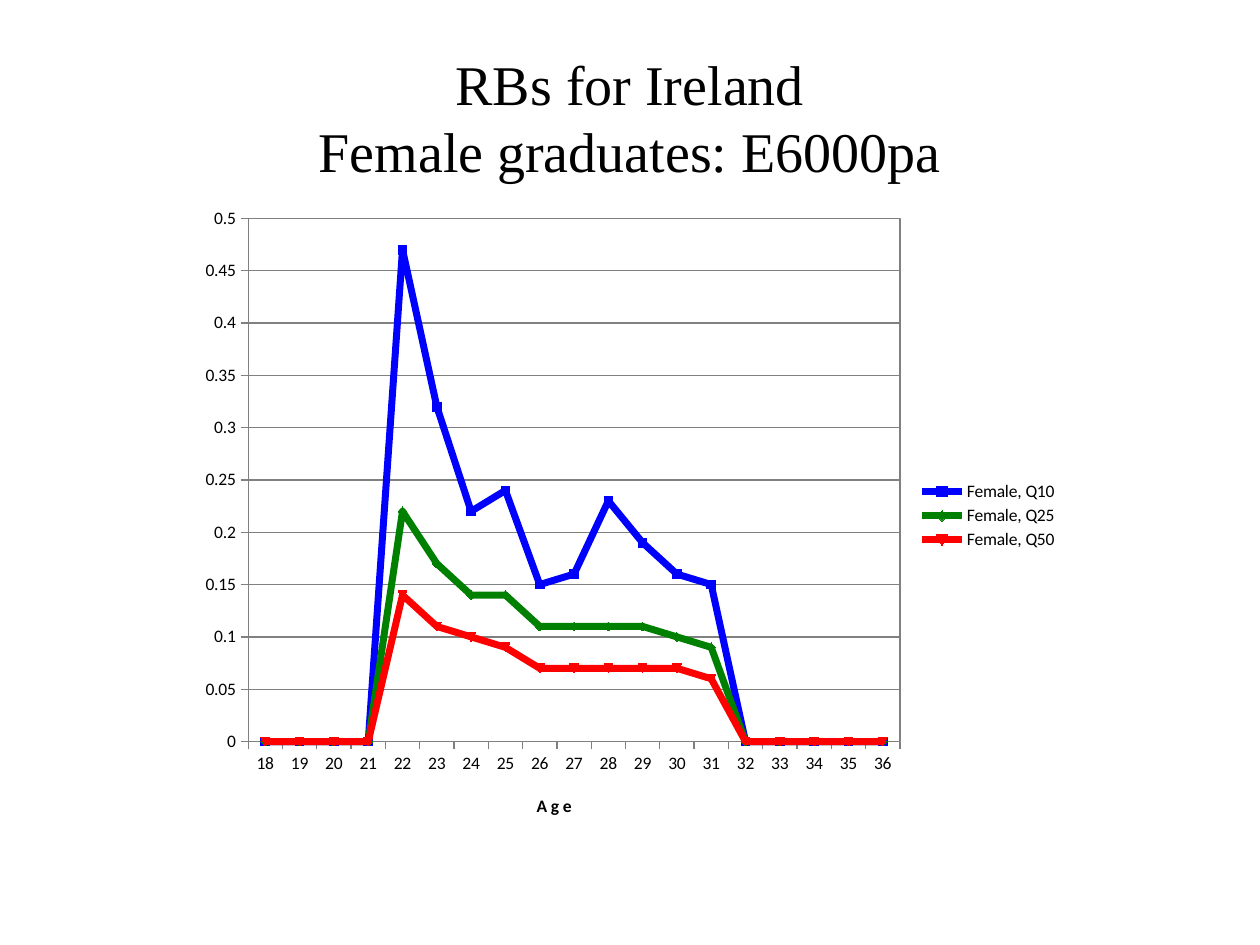
from dataclasses import dataclass

from lxml.etree import SubElement
from pptx import Presentation
from pptx.chart.data import CategoryChartData
from pptx.dml.color import RGBColor
from pptx.enum.chart import XL_CHART_TYPE as ChartType, XL_LEGEND_POSITION as LegendPos, XL_TICK_MARK as Tick
from pptx.enum.text import MSO_ANCHOR as Anchor, PP_ALIGN as Align
from pptx.oxml import parse_xml
from pptx.oxml.ns import nsdecls, qn
from pptx.util import Pt

COLORS = {"text": "000000", "grid": "808080", "q10": "0000FF", "q25": "008000", "q50": "FF0000"}
AGES = range(18, 37)
FIRST_AGE = 22


@dataclass
class Series:
    name: str
    color: str
    values: list[float]


@dataclass
class Box:
    x: float
    y: float
    w: float = 0
    h: float = 0


SERIES = [
    Series("Female, Q10", "q10", [0.47, 0.32, 0.22, 0.24, 0.15, 0.16, 0.23, 0.19, 0.16, 0.15]),
    Series("Female, Q25", "q25", [0.22, 0.17, 0.14, 0.14, 0.11, 0.11, 0.11, 0.11, 0.1, 0.09]),
    Series("Female, Q50", "q50", [0.14, 0.11, 0.1, 0.09, 0.07, 0.07, 0.07, 0.07, 0.07, 0.06]),
]


def rgb(name: str) -> RGBColor:
    return RGBColor.from_string(COLORS[name])


def set_line(line, color: str, width: float) -> None:
    line.color.rgb = rgb(color)
    line.width = Pt(width)


def set_font(font, name: str, size: float, bold: bool = False) -> None:
    font.name, font.size, font.bold = name, Pt(size), bold
    font.color.rgb = rgb("text")


def place(parent, after: str | None, box: Box, inner: bool = False) -> None:
    """Give a chart part a manual layout, in fractions of the chart."""
    for old in parent.findall(qn("c:layout")):
        parent.remove(old)
    layout = parse_xml(f"<c:layout {nsdecls('c')}><c:manualLayout/></c:layout>")
    fields = {"layoutTarget": "inner"} if inner else {}
    fields |= {"xMode": "edge", "yMode": "edge", "x": box.x, "y": box.y}
    if box.w:
        fields |= {"w": box.w, "h": box.h}
    for tag, value in fields.items():
        SubElement(layout[0], qn(f"c:{tag}")).set("val", str(value))
    parent.insert(parent.index(parent.find(qn(after))) + 1 if after else 0, layout)


def add_title(s, lines: list[str]) -> None:
    sp = s.shapes.add_textbox(Pt(36), Pt(21.6), Pt(648), Pt(90))
    tf = sp.text_frame
    tf.word_wrap, tf.vertical_anchor = True, Anchor.MIDDLE
    p = tf.paragraphs[0]
    p.alignment = Align.CENTER
    for i, line in enumerate(lines):
        if i:
            p.add_line_break()
        r = p.add_run()
        r.text = line
        set_font(r.font, "Times New Roman", 32)


def style_axes(chart) -> None:
    for axis in (chart.category_axis, chart.value_axis):
        axis.major_tick_mark, axis.minor_tick_mark = Tick.OUTSIDE, Tick.NONE
        set_line(axis.format.line, "grid", 0.75)
        set_font(axis.tick_labels.font, "Calibri", 10)
    value = chart.value_axis
    value.minimum_scale, value.maximum_scale, value.major_unit = 0, 0.5, 0.05
    value.tick_labels.number_format = "General"
    value.tick_labels.number_format_is_linked = False
    set_line(value.major_gridlines.format.line, "grid", 0.75)
    title = chart.category_axis.axis_title
    r = title.text_frame.paragraphs[0].add_run()
    r.text = "A g e"
    set_font(r.font, "Calibri", 10, bold=True)
    place(title._element, "c:tx", Box(0.39, 0.93))


def style_series(chart) -> None:
    for plotted, series in zip(chart.plots[0].series, SERIES):
        plotted.smooth = False
        set_line(plotted.format.line, series.color, 4)
        plotted.marker.size = 5
        fmt = plotted.marker.format
        fmt.fill.solid()
        fmt.fill.fore_color.rgb = rgb(series.color)
        set_line(fmt.line, series.color, 0.75)


def add_age_chart(s) -> None:
    data = CategoryChartData()
    data.categories = [str(age) for age in AGES]
    for series in SERIES:
        before = [0] * (FIRST_AGE - AGES[0])
        after = [0] * (len(AGES) - len(before) - len(series.values))
        data.add_series(series.name, before + series.values + after)
    chart = s.shapes.add_chart(ChartType.LINE_MARKERS, Pt(108), Pt(111.6), Pt(504.7), Pt(366.5), data).chart
    set_font(chart.font, "Calibri", 10)
    chart.has_title = False
    chart.plots[0].vary_by_categories = False
    chart.has_legend = True
    legend = chart.legend
    legend.position, legend.include_in_layout = LegendPos.RIGHT, False
    set_font(legend.font, "Calibri", 10)
    place(legend._element, "c:legendPos", Box(0.82, 0.44, 0.17, 0.12))
    style_axes(chart)
    style_series(chart)
    area = chart._chartSpace.chart.plotArea
    place(area, None, Box(0.067, 0.036, 0.738, 0.816), inner=True)
    area.append(parse_xml(
        f'<c:spPr {nsdecls("c", "a")}><a:noFill/><a:ln w="{Pt(0.75)}"><a:solidFill>'
        f'<a:srgbClr val="{COLORS["grid"]}"/></a:solidFill></a:ln></c:spPr>'))


def main() -> None:
    prs = Presentation()
    prs.slide_width, prs.slide_height = Pt(720), Pt(540)
    s = prs.slides.add_slide(prs.slide_layouts[6])
    add_title(s, ["RBs for Ireland", "Female graduates: E6000pa"])
    add_age_chart(s)
    prs.save("out.pptx")


if __name__ == "__main__":
    main()
